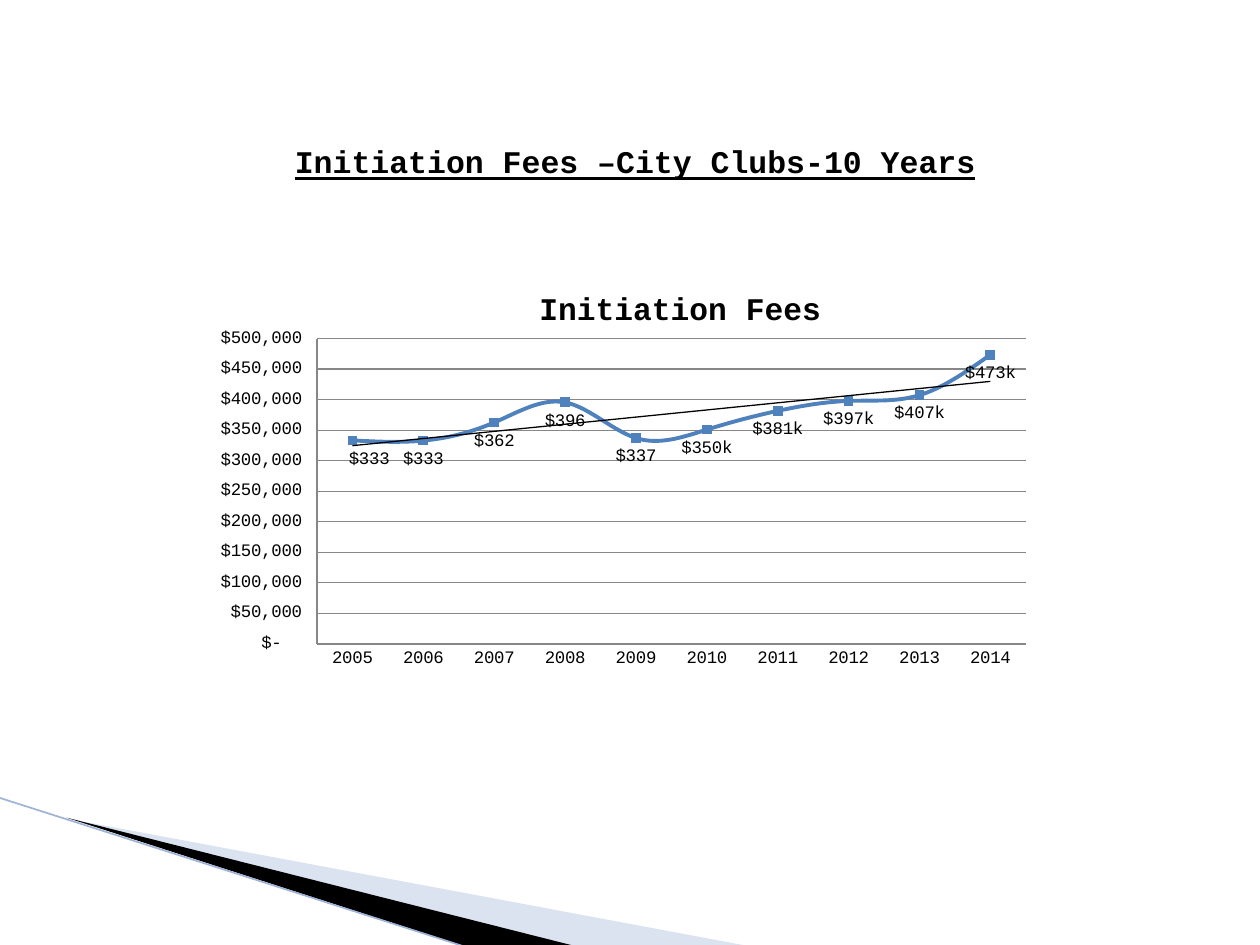
"""Build the slide on initiation fees of city clubs over ten years."""
from lxml.etree import SubElement
from pptx import Presentation
from pptx.chart.data import CategoryChartData
from pptx.dml.color import RGBColor
from pptx.enum.chart import XL_CHART_TYPE as ChartType, XL_LABEL_POSITION as LabelPosition
from pptx.enum.chart import XL_MARKER_STYLE as Marker, XL_TICK_MARK as Tick
from pptx.enum.shapes import MSO_CONNECTOR as Connector
from pptx.enum.text import PP_ALIGN as Align
from pptx.oxml import parse_xml
from pptx.oxml.ns import nsdecls, qn
from pptx.util import Inches, Pt

BLACK = RGBColor(0x00, 0x00, 0x00)
GRAY = RGBColor(0x87, 0x87, 0x87)
BLUE = RGBColor(0x4F, 0x81, 0xBD)
PALE = RGBColor(0xA7, 0xB9, 0xDB)
EDGE = RGBColor(0x9E, 0xB3, 0xD6)
FONT = "Courier New"
FORMAT = '_("$"* #,##0_);_("$"* \\(#,##0\\);_("$"* "-"??_);_(@_)'
FEES = [
    (2005, 333291, "$333"), (2006, 332957, "$333"), (2007, 362554, "$362"),
    (2008, 395575, "$396"), (2009, 337200, "$337"), (2010, 350950, "$350k"),
    (2011, 381621, "$381k"), (2012, 397928, "$397k"), (2013, 407333, "$407k"),
    (2014, 473390, "$473k"),
]


def write(frame, text, size=10, bold=False, underline=False):
    para = frame.paragraphs[0]
    para.alignment = Align.CENTER
    span = para.add_run()
    span.text = text
    span.font.name, span.font.size = FONT, Pt(size)
    span.font.bold, span.font.underline = bold, underline
    span.font.color.rgb = BLACK


def layout(**places):
    items = "".join(f'<c:{name} val="{value}"/>' for name, value in places.items())
    return parse_xml(f'<c:layout {nsdecls("c")}><c:manualLayout>{items}</c:manualLayout></c:layout>')


deck = Presentation()
deck.slide_width, deck.slide_height = Inches(10), Inches(7.5)
UNIT = deck.slide_width // 100
page = deck.slides.add_slide(deck.slide_layouts[6])

wedges = [
    ([(5.5, 65), (59.5, 75.1), (45.6, 75.1)], PALE),
    ([(5.3, 64.9), (45.7, 75.1), (37.2, 75.2)], BLACK),
]
for corners, color in wedges:
    points = [(round(x * UNIT), round(y * UNIT)) for x, y in corners]
    builder = page.shapes.build_freeform(*points[0])
    builder.add_line_segments(points[1:], close=True)
    wedge = builder.convert_to_shape()
    wedge.shadow.inherit = False
    wedge.fill.solid()
    wedge.fill.fore_color.rgb = color
    wedge.line.fill.background()
    if color == PALE:
        tint = wedge.fill._xPr.find(qn("a:solidFill"))[0]
        SubElement(tint, qn("a:alpha"), val="40000")

ends = [round(share * UNIT) for share in (-0.1, 63.3, 37.1, 75.2)]
edge = page.shapes.add_connector(Connector.STRAIGHT, *ends)
edge.line.color.rgb, edge.line.width = EDGE, Pt(0.95)
SubElement(edge._element.spPr, qn("a:effectLst"))

place = [round(share * UNIT) for share in (3.3, 10.8, 94.2, 4)]
box = page.shapes.add_textbox(*place)
box.text_frame.word_wrap = True
write(box.text_frame, "Initiation Fees –City Clubs-10 Years", size=18, bold=True, underline=True)

data = CategoryChartData(number_format=FORMAT)
data.categories = [str(year) for year, fee, label in FEES]
data.add_series("Series 1", [fee for year, fee, label in FEES])
place = [round(share * UNIT) for share in (16.7, 20.9, 66.7, 33.2)]
chart = page.shapes.add_chart(ChartType.LINE_MARKERS, *place, data).chart
chart.has_legend = False
chart.font.name, chart.font.size = FONT, Pt(10)
chart.font.color.rgb = BLACK

chart.has_title = True
write(chart.chart_title.text_frame, "Initiation Fees", size=18, bold=True)
title = chart.chart_title._element
for old in title.findall(qn("c:layout")):
    title.remove(old)
title.find(qn("c:tx")).addnext(layout(xMode="edge", yMode="edge", x=0.38, y=0.05))

area = chart._chartSpace.chart.plotArea
for old in area.findall(qn("c:layout")):
    area.remove(old)
area.insert(0, layout(layoutTarget="inner", xMode="edge", yMode="edge",
                      x=0.12, y=0.18, w=0.85, h=0.73))

for axis in (chart.category_axis, chart.value_axis):
    axis.major_tick_mark = axis.minor_tick_mark = Tick.NONE
    axis.format.line.color.rgb, axis.format.line.width = GRAY, Pt(0.75)
values = chart.value_axis
values.minimum_scale, values.maximum_scale, values.major_unit = 0, 500000, 50000
values.tick_labels.number_format = FORMAT
values.tick_labels.number_format_is_linked = False
values.has_major_gridlines = True
grid = values.major_gridlines.format.line
grid.color.rgb, grid.width = GRAY, Pt(0.75)

plot = chart.plots[0]
plot.vary_by_categories = False
series = plot.series[0]
series.smooth = True
series.format.line.color.rgb, series.format.line.width = BLUE, Pt(2.25)
series.marker.style, series.marker.size = Marker.SQUARE, 5
series.marker.format.fill.solid()
series.marker.format.fill.fore_color.rgb = BLUE
series.marker.format.line.color.rgb = BLUE
series.data_labels.show_value = True
series.data_labels.position = LabelPosition.BELOW
for index, (year, fee, label) in enumerate(FEES):
    tag = series.points[index].data_label
    write(tag.text_frame, label)
    tag.position = LabelPosition.BELOW

first = series._element.find(qn("c:dLbls")).find(qn("c:dLbl"))
first.find(qn("c:idx")).addnext(layout(x=0.02, y=0))
series._element.find(qn("c:cat")).addprevious(parse_xml(
    f'<c:trendline {nsdecls("c", "a")}><c:spPr><a:ln w="9525"><a:solidFill>'
    f'<a:srgbClr val="{BLACK}"/></a:solidFill></a:ln></c:spPr>'
    '<c:trendlineType val="linear"/><c:dispRSqr val="0"/><c:dispEq val="0"/></c:trendline>'))

deck.save("out.pptx")
